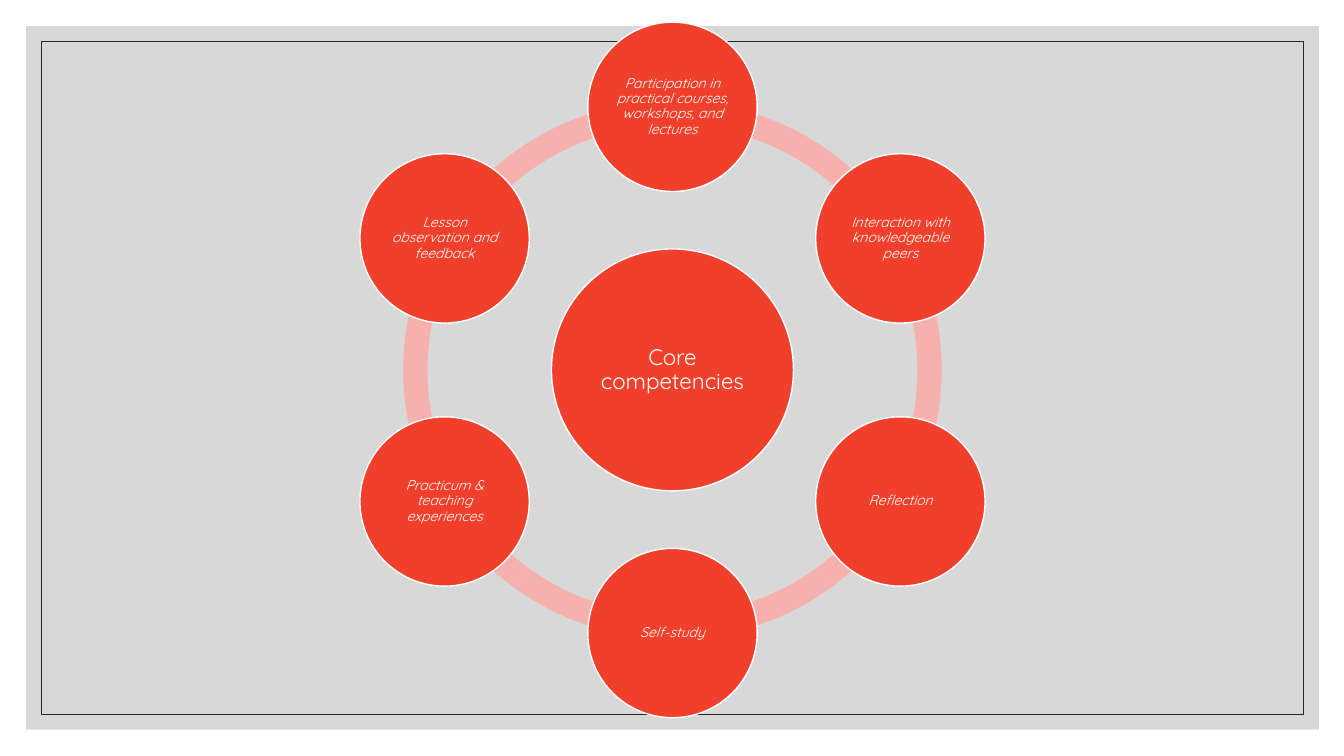
from math import cos, radians, sin

from lxml import etree
from pptx import Presentation
from pptx.dml.color import RGBColor
from pptx.enum.shapes import MSO_SHAPE as SHAPE
from pptx.enum.text import MSO_ANCHOR, PP_ALIGN
from pptx.oxml.ns import qn
from pptx.util import Inches, Pt

FONT = "Quicksand"
RED, PINK, WHITE, GREY, DARK = "F03F2B", "F6B0AD", "FFFFFF", "BFBFBF", "262626"

CORE = "Core competencies"
SOURCES = [
    "Participation in practical courses, workshops, and lectures",
    "Interaction with knowledgeable peers",
    "Reflection",
    "Self-study",
    "Practicum & teaching experiences",
    "Lesson observation and feedback",
]
ARC_ANGLES = [(126, 162), (90, 126), (54, 90), (18, 54), (198, 18), (162, 198)]

CENTER_X, CENTER_Y = 6.67, 3.67
ORBIT = 2.61
RING_SIZE, RING_THICKNESS = 5.34, 0.045
CORE_SIZE, NODE_SIZE = 2.4, 1.68

prs = Presentation()
prs.slide_width, prs.slide_height = Inches(13.33), Inches(7.5)
s = prs.slides.add_slide(prs.slide_layouts[6])


def rgb(color):
    return RGBColor.from_string(color)


def add_shape(kind, x, y, w, h, fill=None, line=None, line_width=1):
    sp = s.shapes.add_shape(kind, Inches(x), Inches(y), Inches(w), Inches(h))
    sp.shadow.inherit = False
    if fill:
        sp.fill.solid()
        sp.fill.fore_color.rgb = rgb(fill)
    else:
        sp.fill.background()
    if line:
        sp.line.color.rgb = rgb(line)
        sp.line.width = Pt(line_width)
    else:
        sp.line.fill.background()
    return sp


def add_circle(text, cx, cy, size, font_size, inset, italic):
    sp = add_shape(SHAPE.OVAL, cx - size / 2, cy - size / 2, size, size, RED, WHITE)
    tf = sp.text_frame
    tf.word_wrap = True
    tf.vertical_anchor = MSO_ANCHOR.MIDDLE
    tf.margin_left = tf.margin_right = Inches(inset)
    tf.margin_top = tf.margin_bottom = Inches(inset)
    tf.text = text
    p = tf.paragraphs[0]
    p.alignment = PP_ALIGN.CENTER
    p.line_spacing = 0.9
    font = p.runs[0].font
    font.name, font.size, font.italic = FONT, Pt(font_size), italic
    font.color.rgb = rgb(WHITE)


panel = add_shape(SHAPE.RECTANGLE, 0.26, 0.26, 12.82, 6.98, GREY)
panel_color = panel.fill._xPr.find(qn("a:solidFill"))[0]
etree.SubElement(panel_color, qn("a:alpha"), val="60000")
add_shape(SHAPE.RECTANGLE, 0.41, 0.41, 12.52, 6.68, line=DARK, line_width=0.5)

for start, end in ARC_ANGLES:
    arc = add_shape(SHAPE.BLOCK_ARC, CENTER_X - RING_SIZE / 2, CENTER_Y - RING_SIZE / 2,
                    RING_SIZE, RING_SIZE, PINK)
    arc.adjustments[0] = start * 0.6
    arc.adjustments[1] = end * 0.6
    arc.adjustments[2] = RING_THICKNESS

add_circle(CORE, CENTER_X, CENTER_Y, CORE_SIZE, 16, 0.02, False)
for i, text in enumerate(SOURCES):
    angle = radians(360 / len(SOURCES) * i - 90)
    add_circle(text, CENTER_X + ORBIT * cos(angle), CENTER_Y + ORBIT * sin(angle),
               NODE_SIZE, 10, 0.01, True)

prs.save("out.pptx")
